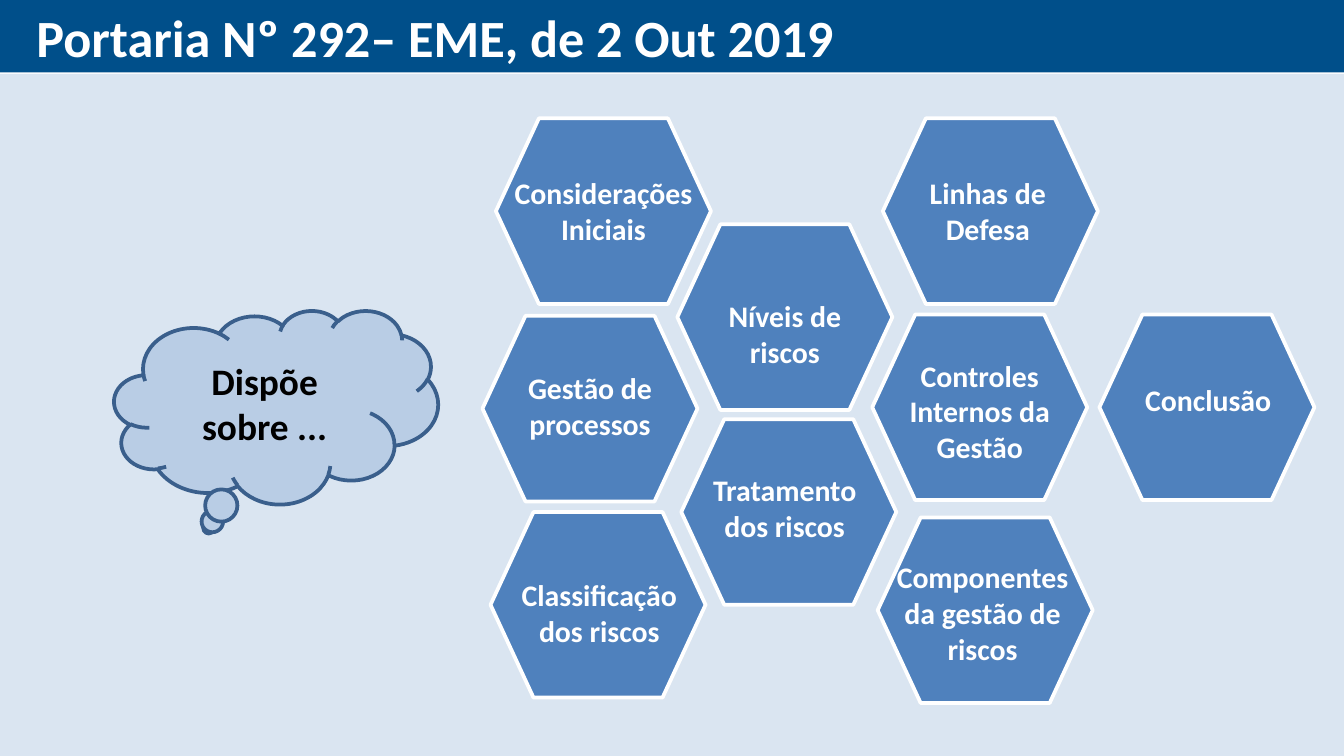
import pptx
import pptx.util
import pptx.dml.color
import pptx.enum.shapes
import pptx.enum.text

Pt = pptx.util.Pt
MSO_SHAPE = pptx.enum.shapes.MSO_SHAPE
PP_ALIGN = pptx.enum.text.PP_ALIGN
MSO_ANCHOR = pptx.enum.text.MSO_ANCHOR

COLORS = {
    "header": "004F8A",
    "body": "DAE5F1",
    "cloud": "B9CDE5",
    "cloud_line": "3A5F8C",
    "hexagon": "4F81BD",
    "white": "FFFFFF",
    "black": "000000",
}
HEX_W, HEX_H = 115.2, 99.4
LINE_H, LABEL_PAD = 19.5, 7.2


class SlideBuilder:
    font = "Calibri"

    def __init__(self, slide):
        self.slide = slide

    def color(self, name):
        return pptx.dml.color.RGBColor.from_string(COLORS[name])

    def shape(self, kind, x, y, w, h, fill, line=None, parent=None):
        shapes = (parent or self.slide).shapes
        sp = shapes.add_shape(kind, Pt(x), Pt(y), Pt(w), Pt(h))
        sp.shadow.inherit = False
        sp.fill.solid()
        sp.fill.fore_color.rgb = self.color(fill)
        if line:
            sp.line.color.rgb = self.color(line)
            sp.line.width = Pt(2)
        else:
            sp.line.fill.background()
        return sp

    def set_text(self, sp, text, size, color, align=PP_ALIGN.CENTER):
        tf = sp.text_frame
        tf.word_wrap = True
        p = tf.paragraphs[0]
        p.text = text
        p.alignment = align
        p.font.name = self.font
        p.font.size = Pt(size)
        p.font.bold = True
        p.font.color.rgb = self.color(color)
        return tf

    def text(self, x, y, w, h, text, size, color, align=PP_ALIGN.CENTER, parent=None):
        shapes = (parent or self.slide).shapes
        sp = shapes.add_textbox(Pt(x), Pt(y), Pt(w), Pt(h))
        return self.set_text(sp, text, size, color, align)

    def hexagon(self, text, x, y, dx, dy, lines, label_w=HEX_W):
        """A hexagon grouped with its label, which sits at (dx, dy) inside it."""
        group = self.slide.shapes.add_group_shape()
        self.shape(MSO_SHAPE.FLOWCHART_PREPARATION, x, y, HEX_W, HEX_H,
                   "hexagon", "white", group)
        self.text(x + dx, y + dy, label_w, lines * LINE_H + LABEL_PAD,
                  text, 16, "white", parent=group)


def main():
    prs = pptx.Presentation()
    prs.slide_width, prs.slide_height = Pt(720), Pt(405)
    s = SlideBuilder(prs.slides.add_slide(prs.slide_layouts[6]))

    # Background bands
    s.shape(MSO_SHAPE.RECTANGLE, 0, 0, 720, 38.9, "header")
    s.shape(MSO_SHAPE.RECTANGLE, 0, 39.6, 720, 365.4, "body")

    # Thought cloud
    cloud = s.shape(MSO_SHAPE.CLOUD_CALLOUT, 61.2, 166.3, 173.5, 103.7,
                    "cloud", "cloud_line")
    tf = s.set_text(cloud, "Dispõe sobre ...", 20, "black")
    tf.vertical_anchor = MSO_ANCHOR.MIDDLE

    # Topics: text, hexagon x and y, label offset, label lines, label width
    topics = [
        ("Componentes da gestão de riscos", 470.2, 277.2, -1.4, 18.7, 3),
        ("Classificação dos riscos", 262.8, 274.3, 0.7, 31, 2),
        ("Níveis de riscos", 362.9, 120.2, 0, 36, 2),
        ("Tratamento dos riscos", 365, 224.6, -2.2, 24.5, 2),
        ("Linhas de Defesa", 473, 63.4, -1.4, 26.6, 2),
        ("Controles Internos da Gestão", 467.3, 168.5, 0, 19.4, 3),
        ("Gestão de processos", 258.5, 169.2, 0, 25.2, 2),
        ("Considerações Iniciais", 265.7, 63.4, -6.5, 26.6, 2, 128.2),
        ("Conclusão", 589, 168.5, 0.7, 32.4, 1),
    ]
    for topic in topics:
        s.hexagon(*topic)

    # Title
    tf = s.text(-6.5, 0, 603.4, 39.6, "Portaria Nº 292– EME, de 2 Out 2019",
                28, "white", PP_ALIGN.LEFT)
    tf.margin_left, tf.margin_right = Pt(26), Pt(5)
    tf.margin_top = tf.margin_bottom = Pt(2.7)

    prs.save("out.pptx")


if __name__ == "__main__":
    main()
